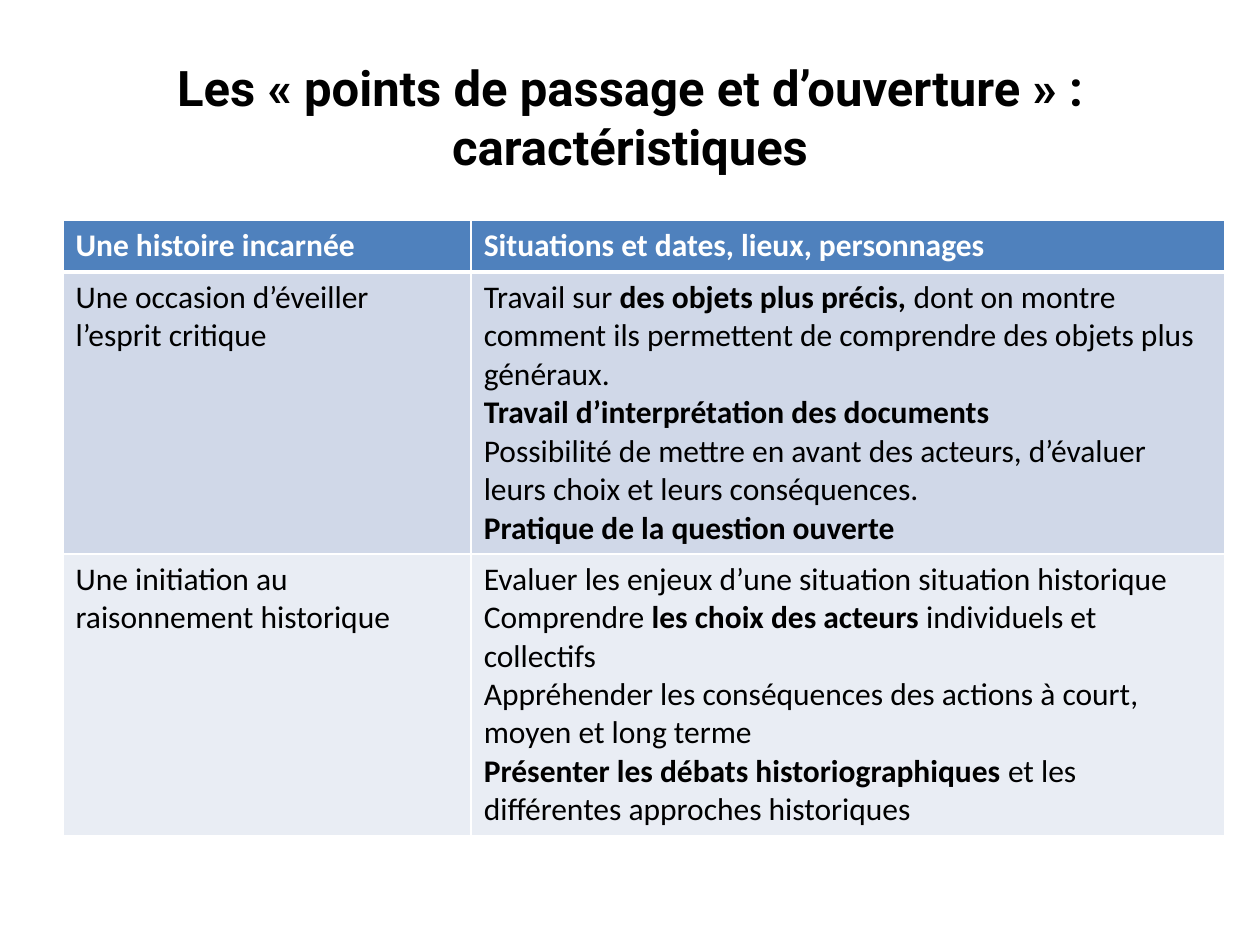
import pptx
import pptx.util
import pptx.dml.color
import pptx.enum.text
import pptx.oxml
import pptx.oxml.ns

Inches = pptx.util.Inches
Pt = pptx.util.Pt

COLORS = {
    "text": "000000",
    "white": "FFFFFF",
    "head": "4F81BD",
    "band": "D0D8E8",
    "pale": "E9EDF4",
}

# Each cell is a list of paragraphs; asterisks enclose bold words
ROWS = [
    (["*Une histoire incarnée*"],
     ["*Situations et dates, lieux, personnages*"]),
    (["Une occasion d’éveiller l’esprit critique"],
     ["Travail sur *des objets plus précis,* dont on montre comment ils "
      "permettent de comprendre des objets plus généraux.",
      "*Travail d’interprétation des documents*",
      "Possibilité de mettre en avant des acteurs, d’évaluer leurs choix "
      "et leurs conséquences.",
      "*Pratique de la question ouverte*"]),
    (["Une initiation au raisonnement historique"],
     ["Evaluer les enjeux d’une situation situation historique",
      "Comprendre *les choix des acteurs *individuels et collectifs",
      "Appréhender les conséquences des actions à court, moyen et long terme",
      "*Présenter les débats historiographiques *et les différentes "
      "approches historiques"]),
]
# Fill, text colour, height and bottom border of each row
STYLES = [
    ("head", "white", 0.41, 3),
    ("band", "text", 2.2, 1),
    ("pale", "text", 2.2, 1),
]


def style(run, face, size, color, bold):
    font = run.font
    font.name, font.size, font.bold = face, Pt(size), bold
    font.color.rgb = pptx.dml.color.RGBColor.from_string(COLORS[color])


def add_title(slide, text):
    title = slide.shapes.title
    title.left, title.top = Inches(0.5), Inches(0.3)
    title.width, title.height = Inches(9), Inches(1.25)
    frame = title.text_frame
    frame.text = text
    frame.vertical_anchor = pptx.enum.text.MSO_ANCHOR.MIDDLE
    para = frame.paragraphs[0]
    para.alignment = pptx.enum.text.PP_ALIGN.CENTER
    style(para.runs[0], "Roboto", 28, "text", True)


def set_edges(cell, top, bottom):
    props = cell._tc.get_or_add_tcPr()
    for side, width in (("L", 1), ("R", 1), ("T", top), ("B", bottom)):
        props.append(pptx.oxml.parse_xml(
            f'<a:ln{side} {pptx.oxml.ns.nsdecls("a")} w="{Pt(width)}">'
            f'<a:solidFill><a:srgbClr val="{COLORS["white"]}"/></a:solidFill>'
            f'</a:ln{side}>'))


def fill_cell(cell, paras, fill, color):
    cell.fill.solid()
    cell.fill.fore_color.rgb = pptx.dml.color.RGBColor.from_string(COLORS[fill])
    frame = cell.text_frame
    for i, text in enumerate(paras):
        para = frame.add_paragraph() if i else frame.paragraphs[0]
        for j, part in enumerate(text.split("*")):
            if part:
                run = para.add_run()
                run.text = part
                style(run, "Calibri", 18, color, j % 2 == 1)


def add_grid(slide):
    table = slide.shapes.add_table(
        len(ROWS), 2, Inches(0.5), Inches(1.75),
        Inches(9.22), Inches(4.81)).table
    for col, width in zip(table.columns, (3.24, 5.98)):
        col.width = Inches(width)
    top = 1
    for r, (cells, (fill, color, height, bottom)) in enumerate(zip(ROWS, STYLES)):
        table.rows[r].height = Inches(height)
        for c, paras in enumerate(cells):
            cell = table.cell(r, c)
            set_edges(cell, top, bottom)
            fill_cell(cell, paras, fill, color)
        top = bottom


def main():
    deck = pptx.Presentation()
    deck.slide_width, deck.slide_height = Inches(10), Inches(7.5)
    slide = deck.slides.add_slide(deck.slide_layouts[5])
    # Heading
    add_title(slide, "Les « points de passage et d’ouverture » : caractéristiques")
    # Table of features
    add_grid(slide)
    deck.save("out.pptx")


if __name__ == "__main__":
    main()
